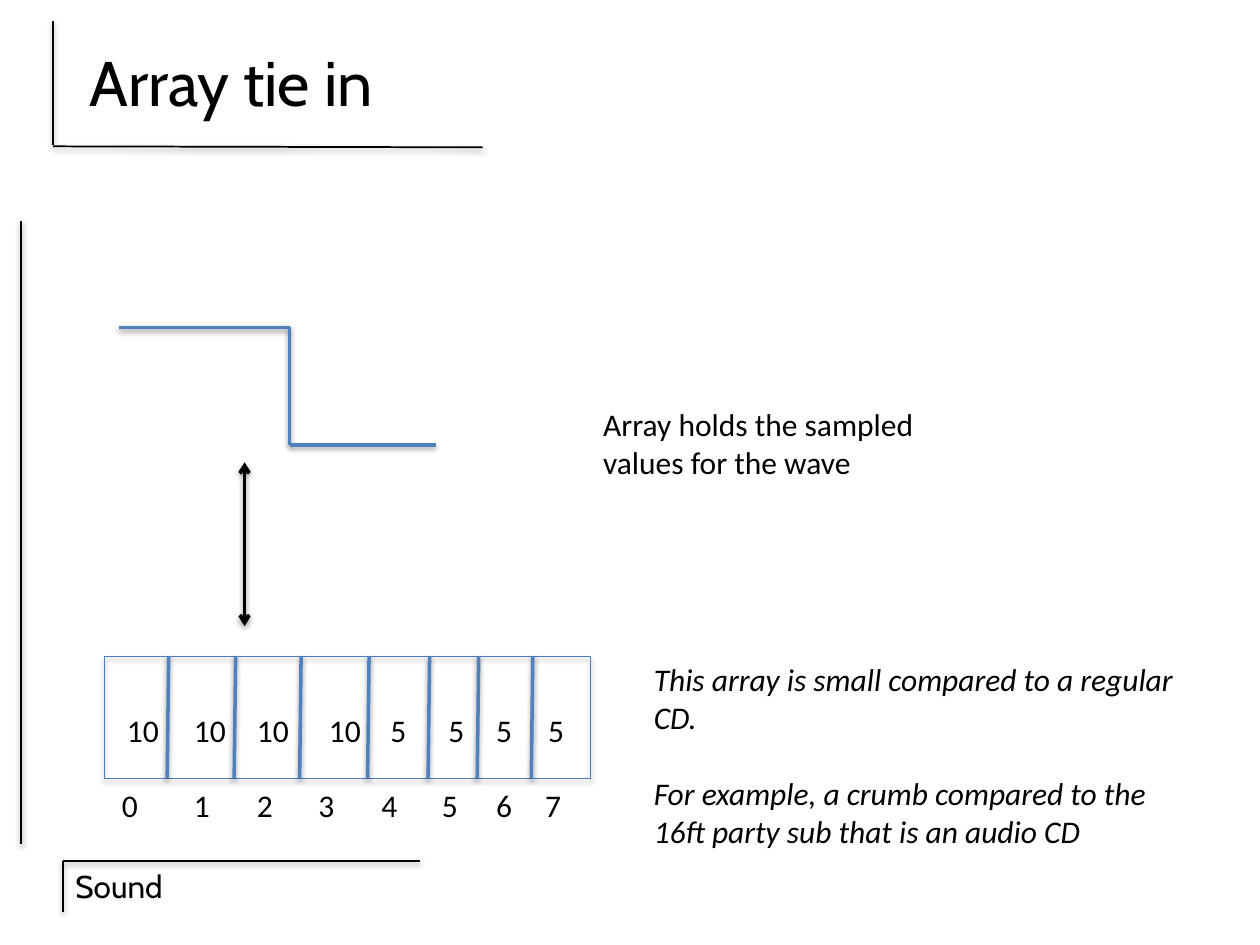
"""Build the slide that ties a sampled sound wave to an array."""
import pptx
import pptx.dml.color
import pptx.enum.shapes
import pptx.enum.text
import pptx.util
from lxml import etree
from pptx.oxml.ns import qn
from pptx.util import Cm

BLACK = pptx.dml.color.RGBColor(0x00, 0x00, 0x00)
WAVE_BLUE = pptx.dml.color.RGBColor(0x4F, 0x81, 0xBD)
BORDER_BLUE = pptx.dml.color.RGBColor(0x4B, 0x7E, 0xBC)

FRAME_LINES = [
    (8.46, 17.35, 1.27, 17.35),
    (0.43, 4.45, 0.43, 17.02),
    (1.27, 17.35, 1.27, 18.39),
    (9.73, 2.97, 1.07, 2.95),
    (1.07, 0.43, 1.07, 2.92),
]
WAVE_POINTS = [(2.39, 6.6), (5.84, 6.6), (5.84, 8.97), (8.79, 8.97)]
ARRAY_TOP, ARRAY_HEIGHT = 13.23, 2.46
INDEX_TOP, VALUE_TOP = 15.72, 14.2
DIVIDERS = [3.4, 4.75, 6.07, 7.44, 8.66, 9.65, 10.74]
INDEX_LEFTS = [2.21, 3.66, 4.93, 6.17, 7.44, 8.66, 9.75, 10.74]
SAMPLES = [(10, 2.31), (10, 3.66), (10, 4.93), (10, 6.38),
           (5, 7.62), (5, 8.79), (5, 9.75), (5, 10.8)]


class SlideBuilder:
    def __init__(self, slide, body_font="Calibri", heading_font="Cabin", size=18):
        self.slide = slide
        self.body_font = body_font
        self.heading_font = heading_font
        self.size = size

    def run(self, paragraph, text, font, size, italic=False):
        run = paragraph.add_run()
        run.text = text
        run.font.name = font
        run.font.size = pptx.util.Pt(size)
        run.font.italic = italic
        run.font.color.rgb = BLACK

    def title(self, text, left, top, width, height):
        shape = self.slide.shapes.title
        shape.left, shape.top = Cm(left), Cm(top)
        shape.width, shape.height = Cm(width), Cm(height)
        frame = shape.text_frame
        frame.auto_size = pptx.enum.text.MSO_AUTO_SIZE.NONE
        frame.vertical_anchor = pptx.enum.text.MSO_ANCHOR.MIDDLE
        paragraph = frame.paragraphs[0]
        paragraph.alignment = pptx.enum.text.PP_ALIGN.CENTER
        self.run(paragraph, text, self.heading_font, 36)

    def text(self, texts, left, top, width, height=1.03, font=None, wrap=True,
             italic=False):
        shape = self.slide.shapes.add_textbox(Cm(left), Cm(top), Cm(width), Cm(height))
        frame = shape.text_frame
        frame.word_wrap = wrap
        frame.auto_size = pptx.enum.text.MSO_AUTO_SIZE.SHAPE_TO_FIT_TEXT
        for number, text in enumerate(texts):
            paragraph = frame.add_paragraph() if number else frame.paragraphs[0]
            if number:
                paragraph.space_before = pptx.util.Pt(22)
            self.run(paragraph, text, font or self.body_font, self.size, italic)

    def line(self, x1, y1, x2, y2, color=BLACK, width=1, arrows=False):
        connector = self.slide.shapes.add_connector(
            pptx.enum.shapes.MSO_CONNECTOR.STRAIGHT, Cm(x1), Cm(y1), Cm(x2), Cm(y2))
        connector.line.color.rgb = color
        connector.line.width = pptx.util.Pt(width)
        if arrows:
            outline = connector.get_or_add_ln()
            for end in ("a:headEnd", "a:tailEnd"):
                etree.SubElement(outline, qn(end), type="arrow")

    def box(self, left, top, width, height):
        shape = self.slide.shapes.add_shape(
            pptx.enum.shapes.MSO_SHAPE.RECTANGLE,
            Cm(left), Cm(top), Cm(width), Cm(height))
        shape.fill.background()
        shape.line.color.rgb = BORDER_BLUE
        shape.line.width = pptx.util.Pt(0.75)


def main():
    presentation = pptx.Presentation()
    presentation.slide_width, presentation.slide_height = Cm(25.4), Cm(19.05)
    builder = SlideBuilder(presentation.slides.add_slide(presentation.slide_layouts[5]))

    for ends in FRAME_LINES:
        builder.line(*ends)
    builder.text(["Sound"], 1.27, 17.35, 6.15, font=builder.heading_font)
    builder.title("Array tie in", 1.27, 0.43, 6.78, 2.41)

    for start, end in zip(WAVE_POINTS, WAVE_POINTS[1:]):
        builder.line(*start, *end, color=WAVE_BLUE, width=2)

    builder.box(2.11, ARRAY_TOP, 9.8, ARRAY_HEIGHT)
    for x in DIVIDERS:
        builder.line(x, ARRAY_TOP, x - 0.03, ARRAY_TOP + ARRAY_HEIGHT,
                     color=WAVE_BLUE, width=2)
    for index, left in enumerate(INDEX_LEFTS):
        builder.text([str(index)], left, INDEX_TOP, 0.84, wrap=False)
    for value, left in SAMPLES:
        width = 1.17 if value >= 10 else 0.84
        builder.text([str(value)], left, VALUE_TOP, width, wrap=False)

    builder.line(4.93, 9.32, 4.93, 12.62, width=2, arrows=True)
    builder.text(["Array holds the sampled values for the wave"], 11.91, 8.05, 8.33, 1.8)
    builder.text(["This array is small compared to a regular CD.",
                  "For example, a crumb compared to the 16ft party sub that is an audio CD"],
                 12.93, 13.18, 11.48, 4.11, italic=True)
    presentation.save("out.pptx")


if __name__ == "__main__":
    main()
